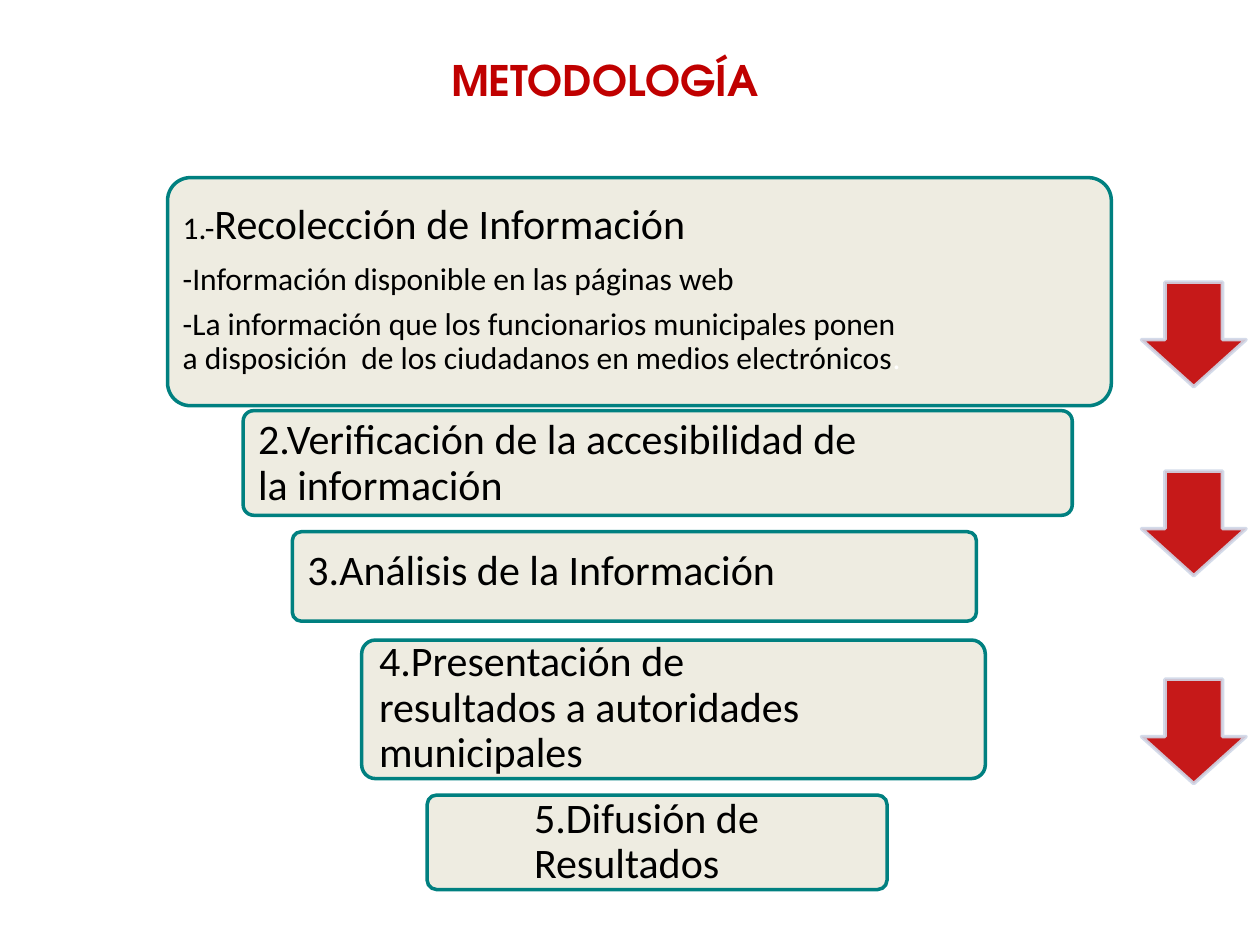
"""Build the METODOLOGÍA slide: five stepped boxes and three down arrows."""
from lxml import etree
from pptx import Presentation
from pptx import util as u
from pptx.dml.color import RGBColor
from pptx.enum import shapes, text
from pptx.oxml.ns import qn

HUES = {"red": "C00000", "teal": "008080", "sand": "EEECE1",
        "mist": "D0D8E8", "black": "000000", "white": "FFFFFF"}
TITLE = "METODOLOGÍA"
MID, TOP = text.MSO_ANCHOR.MIDDLE, text.MSO_ANCHOR.TOP
FIRST = [
    [("1.-", 18, "black"), ("Recolección de Información", 24, "black")],
    [("-Información disponible en las páginas web", 18, "black")],
    [("-La información que los funcionarios municipales ponen a disposición  "
      "de los ciudadanos en medios electrónicos", 18, "black"),
     (".", 18, "white")],
]


def step(words):
    return [[(words, 24, "black")]]


STEPS = [
    ((1.33, 1.41, 7.49, 1.81), (1.38, 1.54, 5.94, 1.64), 0.07, TOP, 0.9, FIRST),
    ((1.93, 3.26, 6.58, 0.83), (1.95, 3.29, 5.23, 0.78), 0.1, MID, 0.9,
     step("2.Verificación de la accesibilidad de la información")),
    ((2.32, 4.22, 5.43, 0.71), (2.34, 4.24, 5.39, 0.67), 0.1, TOP, 1,
     step("3.Análisis de la Información")),
    ((2.87, 5.08, 4.95, 1.1), (2.91, 5.11, 3.91, 1.03), 0.1, MID, 0.9,
     step("4.Presentación de resultados a autoridades municipales")),
    ((3.39, 6.31, 3.65, 0.75), (4.14, 6.33, 2.89, 0.71), 0.1, MID, 0.9,
     step("5.Difusión de Resultados")),
]
ARROWS = [2.24, 3.74, 5.39]


def hue(name):
    return RGBColor.from_string(HUES[name])


def draw(slide, kind, at, adjust, fill, line):
    shape = slide.shapes.add_shape(kind, *map(u.Inches, at))
    shape.shadow.inherit = False
    for i, value in enumerate(adjust):
        shape.adjustments[i] = value
    shape.fill.solid()
    shape.fill.fore_color.rgb = hue(fill)
    shape.line.color.rgb = hue(line)
    shape.line.width = u.Pt(2)
    return shape


def fade(shape, part):
    for tint in shape._element.spPr.iter(qn("a:srgbClr")):
        etree.SubElement(tint, qn("a:alpha"), val=str(part * 1000))


def write(slide, at, inset, anchor, space, paras):
    frame = slide.shapes.add_textbox(*map(u.Inches, at)).text_frame
    frame.word_wrap = True
    frame.vertical_anchor = anchor
    frame.margin_left = frame.margin_right = u.Inches(inset)
    frame.margin_top = frame.margin_bottom = u.Inches(min(inset, 0.07))
    for i, runs in enumerate(paras):
        para = frame.paragraphs[0] if i == 0 else frame.add_paragraph()
        para.line_spacing = space
        para.space_after = u.Pt(0.35 * max(size for _, size, _ in runs))
        para.font.name = "Calibri"
        for words, size, tint in runs:
            run = para.add_run()
            run.text = words
            run.font.size = u.Pt(size)
            run.font.color.rgb = hue(tint)
    return frame


def main():
    deck = Presentation()
    deck.slide_width, deck.slide_height = u.Inches(10), u.Inches(7.5)
    slide = deck.slides.add_slide(deck.slide_layouts[6])
    kinds = shapes.MSO_SHAPE
    for box, *body in STEPS:
        draw(slide, kinds.ROUNDED_RECTANGLE, box, [0.1], "sand", "teal")
        write(slide, *body)
    for top in ARROWS:
        arrow = draw(slide, kinds.DOWN_ARROW, (9.06, top, 0.83, 0.83),
                     [0.55, 0.45], "red", "mist")
        fade(arrow, 90)
    head = write(slide, (2.95, 0.36, 3.7, 0.5), 0.1, TOP, 1,
                 [[(TITLE, 24, "red")]]).paragraphs[0]
    head.alignment = text.PP_ALIGN.CENTER
    head.font.name = "TeX Gyre Adventor"
    head.font.bold = True
    deck.save("out.pptx")


if __name__ == "__main__":
    main()
